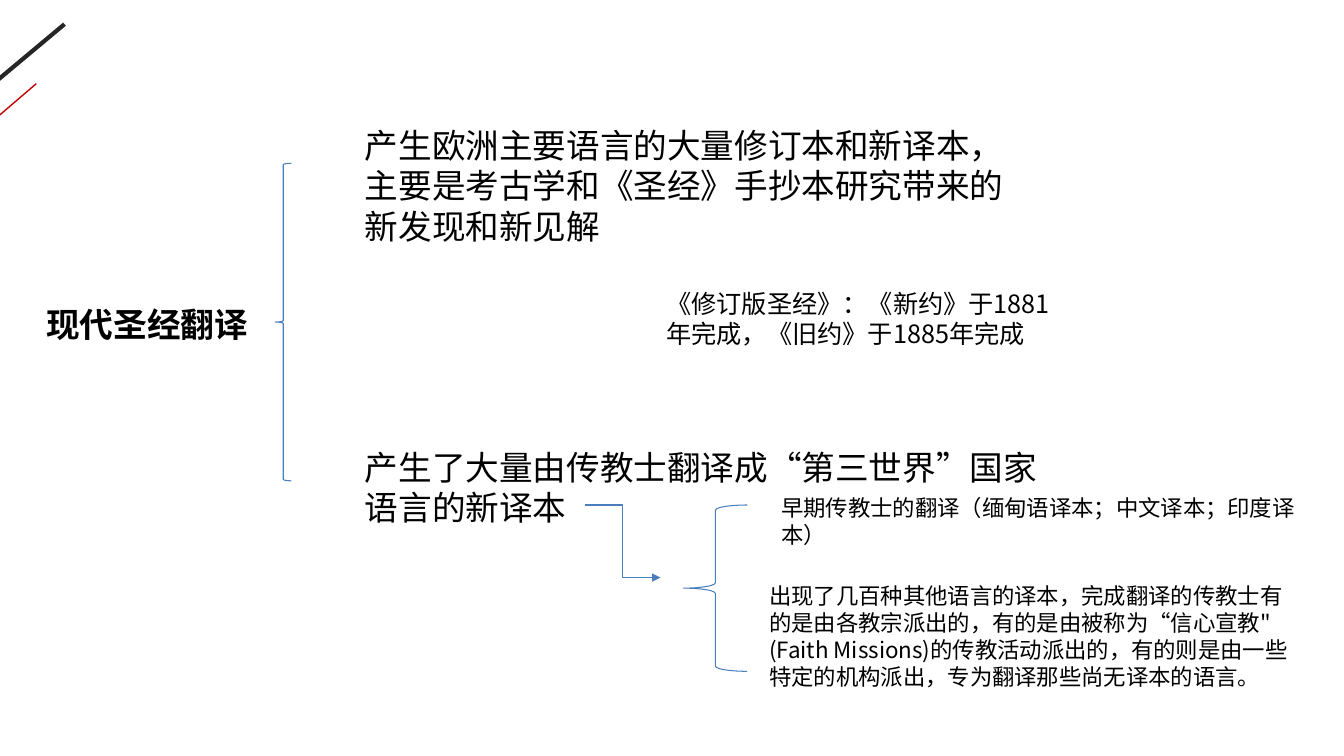
import pptx
import pptx.util
import pptx.dml.color
import pptx.enum.shapes
import pptx.enum.text
import pptx.oxml.ns
import lxml.etree

PX = 9144
FONT = "Noto Sans CJK SC"
BLUE = "4B7EBC"
QN = pptx.oxml.ns.qn
CONNECTOR = pptx.enum.shapes.MSO_CONNECTOR


def paint(color_format, color):
    color_format.rgb = pptx.dml.color.RGBColor.from_string(color)


def write(box, text, size, bold=False):
    frame = box.text_frame
    frame.word_wrap = True
    frame.auto_size = pptx.enum.text.MSO_AUTO_SIZE.SHAPE_TO_FIT_TEXT
    frame.vertical_anchor = pptx.enum.text.MSO_ANCHOR.TOP
    para = frame.paragraphs[0]
    para.alignment = pptx.enum.text.PP_ALIGN.LEFT
    para.line_spacing = 1.0
    para.space_before = pptx.util.Pt(0)
    span = para.add_run()
    span.text = text
    span.font.size = pptx.util.Pt(size)
    span.font.bold = bold
    span.font.name = FONT
    paint(span.font.color, "000000")
    lxml.etree.SubElement(span.font._element, QN("a:ea"), typeface=FONT)


deck = pptx.Presentation()
deck.slide_width = 1333 * PX
deck.slide_height = 750 * PX
page = deck.slides.add_slide(deck.slide_layouts[5])

title = page.shapes.title
title.left, title.top, title.width, title.height = 36 * PX, 296 * PX, 958 * PX, 50 * PX
write(title, "现代圣经翻译", 24, True)

lines = [
    (CONNECTOR.STRAIGHT, 64, 24, -21, 95, "262626", 3),
    (CONNECTOR.STRAIGHT, 36, 83, -6, 119, "C00000", 1),
    (CONNECTOR.ELBOW, 580, 501, 655, 573, BLUE, 0.75),
]
for kind, x1, y1, x2, y2, color, weight in lines:
    line = page.shapes.add_connector(kind, x1 * PX, y1 * PX, x2 * PX, y2 * PX)
    paint(line.line.color, color)
    line.line.width = pptx.util.Pt(weight)
    if kind == CONNECTOR.ELBOW:
        lxml.etree.SubElement(line.line._get_or_add_ln(), QN("a:tailEnd"), type="triangle")
    lxml.etree.SubElement(line._element.spPr, QN("a:effectLst"))

for left, top, width, height in [(273, 162, 16, 315), (678, 501, 63, 165)]:
    brace = page.shapes.add_shape(
        pptx.enum.shapes.MSO_SHAPE.LEFT_BRACE, left * PX, top * PX, width * PX, height * PX)
    brace.shadow.inherit = False
    brace.fill.background()
    paint(brace.line.color, BLUE)
    brace.line.width = pptx.util.Pt(0.75)

notes = [
    (352, 119, 654, 131, 24,
     "产生欧洲主要语言的大量修订本和新译本，主要是考古学和《圣经》手抄本研究带来的新发现和新见解"),
    (352, 438, 709, 94, 24, "产生了大量由传教士翻译成“第三世界”国家语言的新译本"),
    (651, 281, 409, 71, 18, "《修订版圣经》：《新约》于1881年完成，《旧约》于1885年完成"),
    (765, 485, 568, 37, 16, "早期传教士的翻译（缅甸语译本；中文译本；印度译本）"),
    (753, 573, 551, 118, 16,
     "出现了几百种其他语言的译本，完成翻译的传教士有的是由各教宗派出的，"
     "有的是由被称为“信心宣教\" (Faith Missions)的传教活动派出的，"
     "有的则是由一些特定的机构派出，专为翻译那些尚无译本的语言。"),
]
for left, top, width, height, size, text in notes:
    box = page.shapes.add_textbox(left * PX, top * PX, width * PX, height * PX)
    write(box, text, size)

deck.save("out.pptx")
